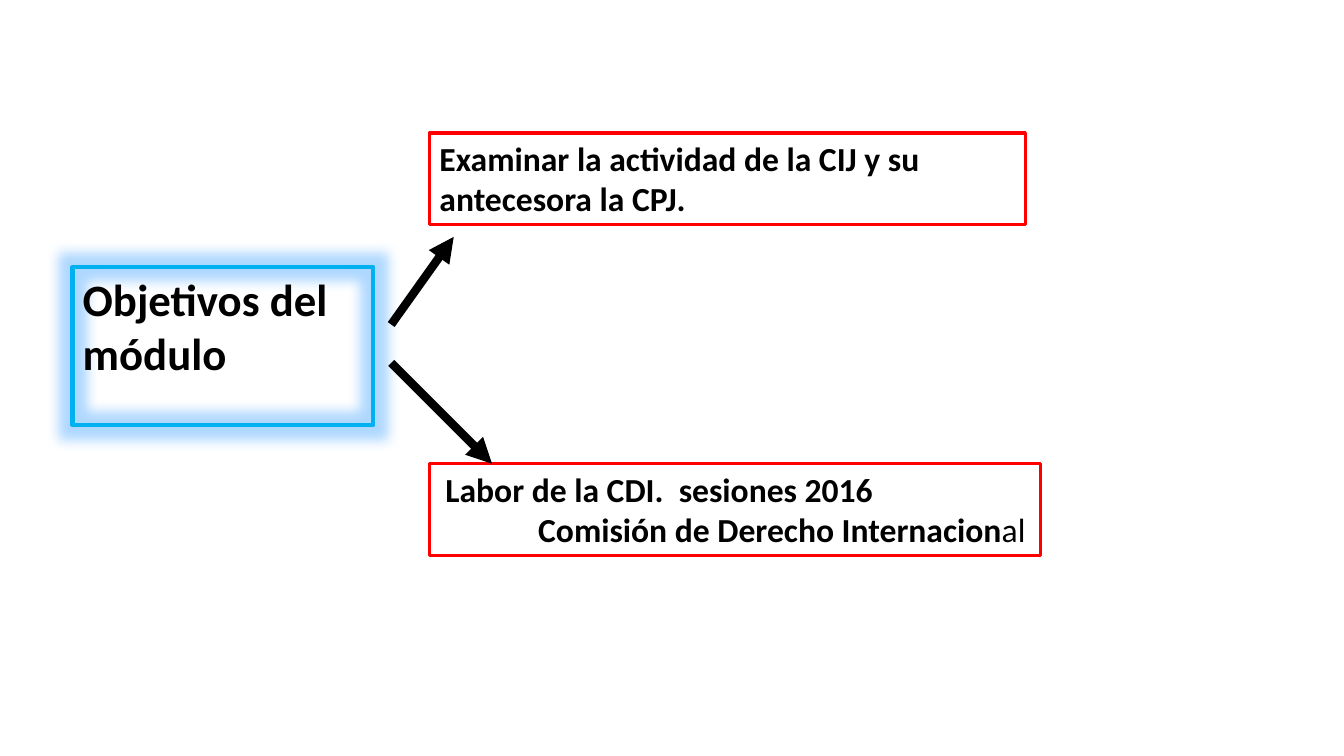
from dataclasses import dataclass

from lxml.etree import SubElement
from pptx import Presentation
from pptx.dml.color import RGBColor
from pptx.enum.shapes import MSO_CONNECTOR
from pptx.enum.text import MSO_ANCHOR, MSO_AUTO_SIZE, PP_ALIGN
from pptx.oxml.ns import qn
from pptx.shapes.base import BaseShape
from pptx.slide import Slide
from pptx.text.text import TextFrame
from pptx.util import Emu, Pt

PX = 9144  # 100 px to the inch


@dataclass
class Line:
    runs: list[tuple[str, bool]]  # text, bold
    indent: int = 0


@dataclass
class Box:
    left: int
    top: int
    width: int
    height: int
    lines: list[Line]
    edge: str = "FF0000"
    weight: float = 2.25
    size: int = 24
    right: int = 10


@dataclass
class Arrow:
    start: tuple[int, int]
    end: tuple[int, int]


TITLE = Box(72, 265, 298, 118, [Line([("Objetivos del módulo", True)])],
            edge="00B0F0", weight=3, size=32)
GOALS = [
    Box(426, 132, 591, 91, [
        Line([("Examinar la actividad de la CIJ y su antecesora la CPJ.", True)]),
    ]),
    Box(426, 460, 606, 91, [
        Line([("Labor de la CDI.  sesiones 2016", True)], indent=6),
        Line([("Comisión de Derecho Internacion", True), ("al", False)], indent=98),
    ], right=0),
]
ARROWS = [Arrow((388, 322), (450, 235)), Arrow((388, 360), (488, 460))]


def px(count: int) -> Emu:
    return Emu(count * PX)


def rgb(code: str) -> RGBColor:
    return RGBColor.from_string(code)


def write(frame: TextFrame, lines: list[Line], *, size: int, right: int = 10,
          color: str = "000000", font: str = "Calibri") -> None:
    frame.word_wrap = True
    frame.auto_size = MSO_AUTO_SIZE.SHAPE_TO_FIT_TEXT
    frame.vertical_anchor = MSO_ANCHOR.TOP
    frame.margin_right = px(right)
    for i, line in enumerate(lines):
        para = frame.add_paragraph() if i else frame.paragraphs[0]
        para.alignment = PP_ALIGN.LEFT
        if line.indent:
            para._p.get_or_add_pPr().set("marL", str(px(line.indent)))
        for text, bold in line.runs:
            run = para.add_run()
            run.text = text
            run.font.name = font
            run.font.size = Pt(size)
            run.font.bold = bold
            run.font.color.rgb = rgb(color)


def style(shape: BaseShape, box: Box) -> None:
    shape.left, shape.top = px(box.left), px(box.top)
    shape.width, shape.height = px(box.width), px(box.height)
    shape.fill.background()
    shape.line.color.rgb = rgb(box.edge)
    shape.line.width = Pt(box.weight)
    write(shape.text_frame, box.lines, size=box.size, right=box.right)


def glow(shape: BaseShape, color: str, radius: int, alpha: int) -> None:
    effects = SubElement(shape._element.spPr, qn("a:effectLst"))
    halo = SubElement(effects, qn("a:glow"), rad=str(px(radius)))
    tint = SubElement(halo, qn("a:srgbClr"), val=color)
    SubElement(tint, qn("a:alpha"), val=str(alpha * 1000))


def draw(slide: Slide, arrow: Arrow) -> None:
    line = slide.shapes.add_connector(
        MSO_CONNECTOR.STRAIGHT, *map(px, arrow.start + arrow.end))
    line.line.color.rgb = rgb("000000")
    line.line.width = Pt(6)
    SubElement(line.line._get_or_add_ln(), qn("a:tailEnd"), type="triangle")
    SubElement(line._element.spPr, qn("a:effectLst"))


def main() -> None:
    deck = Presentation()
    deck.slide_width, deck.slide_height = px(1333), px(750)
    slide = deck.slides.add_slide(deck.slide_layouts[5])

    # Title with its halo
    title = slide.shapes.title
    style(title, TITLE)
    glow(title, "379EFF", radius=25, alpha=40)

    # Goals
    for box in GOALS:
        style(slide.shapes.add_textbox(0, 0, 0, 0), box)

    # Arrows from the title to the goals
    for arrow in ARROWS:
        draw(slide, arrow)

    deck.save("out.pptx")


if __name__ == "__main__":
    main()
